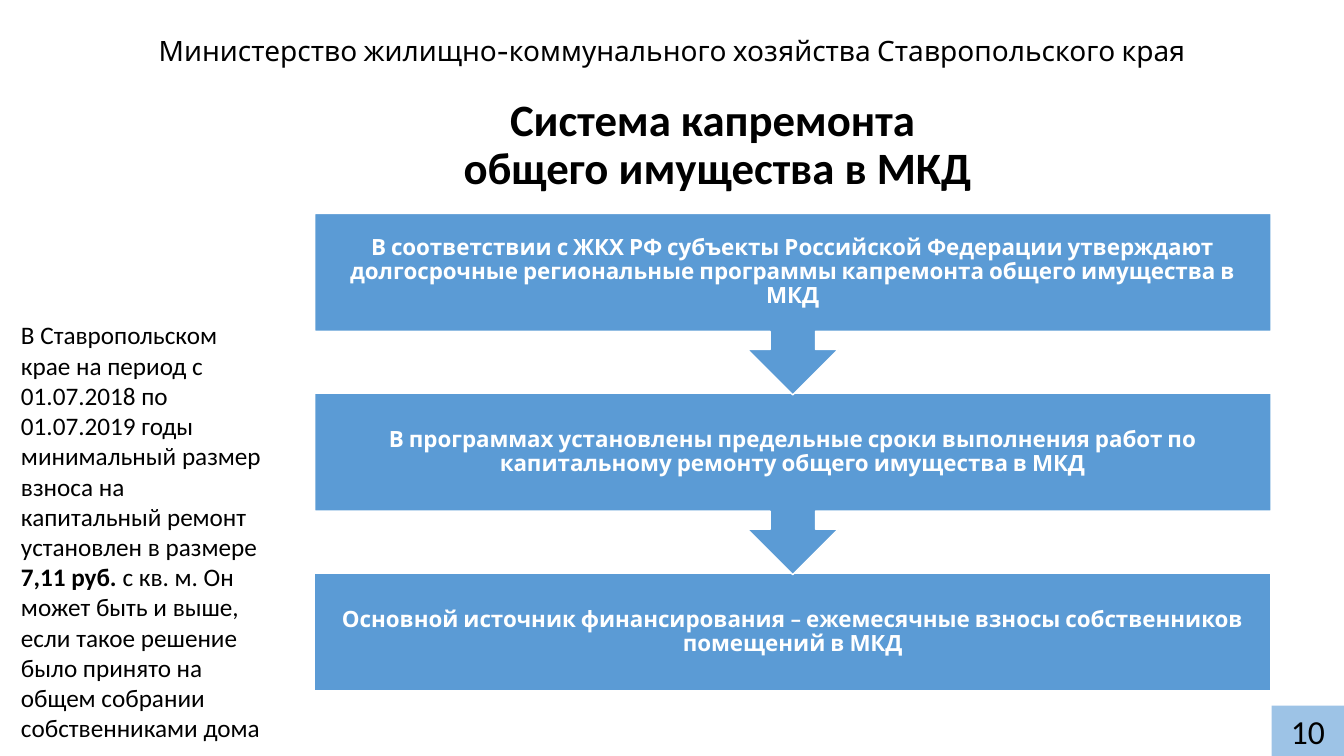
from dataclasses import dataclass

from pptx import Presentation
from pptx.dml.color import RGBColor
from pptx.enum.shapes import MSO_SHAPE as Preset
from pptx.enum.text import MSO_ANCHOR as Anchor, PP_ALIGN as Align
from pptx.util import Cm, Pt


@dataclass(frozen=True)
class Theme:
    black: RGBColor = RGBColor(0x00, 0x00, 0x00)
    white: RGBColor = RGBColor(0xFF, 0xFF, 0xFF)
    step_blue: RGBColor = RGBColor(0x5B, 0x9B, 0xD5)
    number_blue: RGBColor = RGBColor(0x9D, 0xC3, 0xE6)
    heading_font: str = "Cabin"
    body_font: str = "Calibri"
    title_size: int = 32
    number_size: int = 24
    header_size: int = 20
    body_size: int = 18
    step_size: int = 16


THEME = Theme()

HEADER = "Министерство жилищно-коммунального хозяйства Ставропольского края"
TITLE = [["Система капремонта "], ["общего имущества в МКД"]]
STEPS = [
    "В соответствии с ЖКХ РФ субъекты Российской Федерации утверждают "
    "долгосрочные региональные программы капремонта общего имущества в МКД",
    "В программах установлены предельные сроки выполнения работ по "
    "капитальному ремонту общего имущества в МКД",
    "Основной источник финансирования – ежемесячные взносы собственников "
    "помещений в МКД",
]
FEE = "7,11 руб. "
FEE_NOTE = [
    "В Ставропольском крае на период с 01.07.2018 по 01.07.2019 годы "
    "минимальный размер взноса на капитальный ремонт установлен в размере ",
    FEE,
    "с кв. м. Он может быть и выше, если такое решение было принято на "
    "общем собрании собственниками дома",
]

STEP_LEFT, STEP_TOP, STEP_WIDTH = 7.93, 5.38, 24.1
STEP_PITCH, STEP_HEIGHT, CALLOUT_HEIGHT = 4.53, 2.97, 4.57


def write_text(shape, paragraphs, size, font=THEME.body_font, color=THEME.black,
               bold=False, bold_runs=(), align=Align.CENTER, anchor=Anchor.TOP,
               line_spacing=1.0, inset=None):
    frame = shape.text_frame
    frame.word_wrap = True
    frame.vertical_anchor = anchor
    if inset is not None:
        frame.margin_left = frame.margin_right = Cm(inset)
        frame.margin_top = frame.margin_bottom = Cm(inset)
    for index, runs in enumerate(paragraphs):
        paragraph = frame.add_paragraph() if index else frame.paragraphs[0]
        paragraph.alignment = align
        paragraph.line_spacing = line_spacing
        for text in runs:
            run = paragraph.add_run()
            run.text = text
            run.font.name = font
            run.font.size = Pt(size)
            run.font.bold = bold or text in bold_runs
            run.font.color.rgb = color


def add_text(slide, left, top, width, height, paragraphs, **text_format):
    box = slide.shapes.add_textbox(Cm(left), Cm(top), Cm(width), Cm(height))
    write_text(box, paragraphs, **text_format)


def add_block(slide, preset, left, top, width, height, fill, line=None):
    shape = slide.shapes.add_shape(preset, Cm(left), Cm(top), Cm(width), Cm(height))
    shape.shadow.inherit = False
    shape.fill.solid()
    shape.fill.fore_color.rgb = fill
    if line is None:
        shape.line.fill.background()
    else:
        shape.line.color.rgb = line
        shape.line.width = Pt(1)
    return shape


def add_steps(slide):
    last = len(STEPS) - 1
    for index in range(last, -1, -1):
        preset, height = Preset.DOWN_ARROW_CALLOUT, CALLOUT_HEIGHT
        if index == last:
            preset, height = Preset.RECTANGLE, STEP_HEIGHT
        step = add_block(slide, preset, STEP_LEFT, STEP_TOP + index * STEP_PITCH,
                         STEP_WIDTH, height, THEME.step_blue, line=THEME.white)
        write_text(step, [[STEPS[index]]], size=THEME.step_size,
                   font=THEME.heading_font, color=THEME.white, bold=True,
                   anchor=Anchor.MIDDLE, line_spacing=0.9, inset=0.3)


def add_slide_number(slide):
    number = add_block(slide, Preset.RECTANGLE, 32.05, 17.78, 1.82, 1.27,
                       THEME.number_blue)
    write_text(number, [["10"]], size=THEME.number_size)


def main():
    presentation = Presentation()
    presentation.slide_width = Cm(33.87)
    presentation.slide_height = Cm(19.05)
    slide = presentation.slides.add_slide(presentation.slide_layouts[6])

    add_text(slide, 2.33, 0.76, 29.21, 1.12, [[HEADER]], size=THEME.header_size,
             font=THEME.heading_font, anchor=Anchor.MIDDLE, line_spacing=0.9)
    add_text(slide, 7.93, 2.34, 20.32, 2.72, TITLE, size=THEME.title_size,
             bold=True, line_spacing=0.9)
    add_steps(slide)
    add_text(slide, 0.28, 7.93, 6.73, 11.79, [FEE_NOTE], size=THEME.body_size,
             bold_runs=[FEE], align=Align.LEFT)
    add_slide_number(slide)

    presentation.save("out.pptx")


if __name__ == "__main__":
    main()
